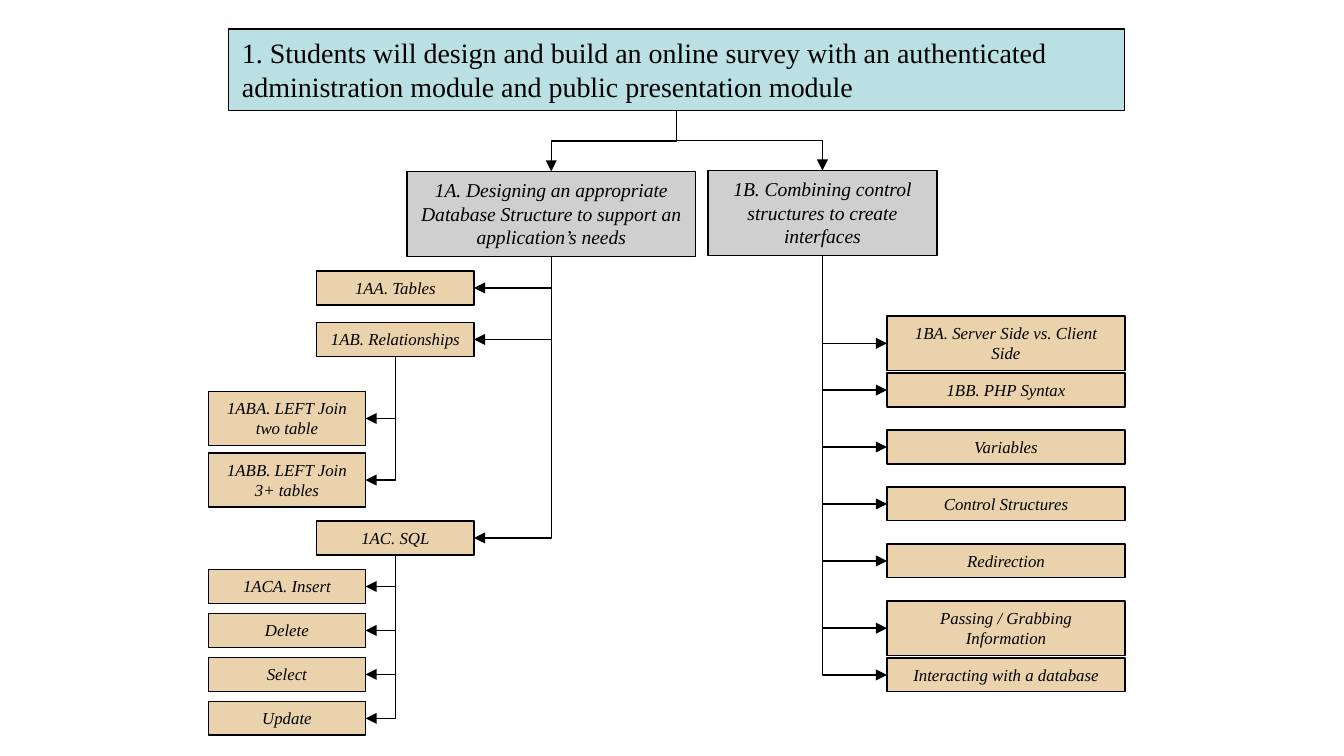
from pptx import Presentation, util as u
from pptx.dml.color import RGBColor
from pptx.enum import shapes, text
from pptx.oxml.ns import qn
from lxml import etree

COLOURS = {"goal": "BBE0E3", "module": "CFCFCF", "topic": "EAD3AC", "ink": "000000"}
SIZES = {"goal": 15, "module": 10.5, "topic": 9}
WIDTH = u.Inches(10)
HEIGHT = WIDTH * 9 // 16
CELL = WIDTH / 100  # the slide is a grid of 100 columns of square cells
ONE_LINE, TWO_LINES = 2.52, 4.04  # topic heights in rows


def cells(n):
    return round(n * CELL)


def rgb(name):
    return RGBColor.from_string(COLOURS[name])


def style_box(sp, label, kind, box):
    for name, value in zip(("left", "top", "width", "height"), box):
        setattr(sp, name, cells(value))
    sp.fill.solid()
    sp.fill.fore_color.rgb = rgb(kind)
    sp.line.color.rgb = rgb("ink")
    sp.line.width = u.Pt(0.75)
    tf = sp.text_frame
    frame_format = {
        "word_wrap": True, "auto_size": text.MSO_AUTO_SIZE.NONE,
        "vertical_anchor": text.MSO_ANCHOR.TOP,
        "margin_left": u.Inches(0.1), "margin_right": u.Inches(0.1),
        "margin_top": u.Inches(0.05), "margin_bottom": u.Inches(0.05),
    }
    for name, value in frame_format.items():
        setattr(tf, name, value)
    p = tf.paragraphs[0]
    p.alignment = text.PP_ALIGN.LEFT if kind == "goal" else text.PP_ALIGN.CENTER
    r = p.add_run()
    r.text = label
    font_format = {"name": "Times New Roman", "size": u.Pt(SIZES[kind]),
                   "bold": False, "italic": kind != "goal"}
    for name, value in font_format.items():
        setattr(r.font, name, value)
    r.font.color.rgb = rgb("ink")


def add_box(s, label, kind, box):
    sp = s.shapes.add_shape(shapes.MSO_SHAPE.RECTANGLE, 0, 0, 0, 0)
    sp.shadow.inherit = False
    style_box(sp, label, kind, box)
    return box


def add_elbow(s, start, end, preset):
    """Arrow that leaves start downwards; the preset is turned a quarter."""
    (x1, y1), (x2, y2) = start, end
    run, drop = abs(x2 - x1), y2 - y1
    left, top = (x1 + x2 - drop) / 2, (y1 + y2 - run) / 2
    cx = s.shapes.add_connector(shapes.MSO_CONNECTOR.ELBOW, cells(left), cells(top),
                                cells(left + drop), cells(top + run))
    cx.line.color.rgb = rgb("ink")
    cx.line.width = u.Pt(0.75)
    sp_pr = cx._element.spPr
    sp_pr.find(qn("a:prstGeom")).set("prst", preset)
    xfrm = sp_pr.find(qn("a:xfrm"))
    if x2 < x1:
        xfrm.set("rot", str(90 * 60000))
    else:
        xfrm.set("rot", str(270 * 60000))
        xfrm.set("flipH", "1")
    etree.SubElement(sp_pr.find(qn("a:ln")), qn("a:tailEnd"), type="triangle")
    etree.SubElement(sp_pr, qn("a:effectLst"))


def bottom_centre(box):
    left, top, width, height = box
    return left + width / 2, top + height


def add_goal(s, label, box):
    style_box(s.shapes.title, label, "goal", box)
    return box


def add_module(s, goal, label, box):
    left, top, width, _ = add_box(s, label, "module", box)
    add_elbow(s, bottom_centre(goal), (left + width / 2, top), "bentConnector3")
    return box


def add_branch(s, parent, left, width, topics):
    """Topics (label, top, height) beside the trunk below parent; returns their boxes."""
    trunk = bottom_centre(parent)
    boxes = []
    for label, top, height in topics:
        boxes.append(add_box(s, label, "topic", (left, top, width, height)))
        edge = left if left > trunk[0] else left + width
        add_elbow(s, trunk, (edge, top + height / 2), "bentConnector2")
    return boxes


def stack(labels, top, pitch, two_line=()):
    return [(label, top + i * pitch, TWO_LINES if label in two_line else ONE_LINE)
            for i, label in enumerate(labels)]


def main():
    prs = Presentation()
    prs.slide_width, prs.slide_height = WIDTH, HEIGHT
    s = prs.slides.add_slide(prs.slide_layouts[5])

    goal = add_goal(s, "1. Students will design and build an online survey with an "
                    "authenticated administration module and public presentation module",
                    (17, 2.15, 66.67, 6.07))
    database = add_module(s, goal, "1A. Designing an appropriate Database Structure "
                          "to support an application’s needs", (30.27, 12.75, 21.5, 6.35))
    control = add_module(s, goal, "1B. Combining control structures to create interfaces",
                         (52.67, 12.68, 17.05, 6.33))

    _, relationships, sql = add_branch(s, database, 23.57, 11.7, [
        ("1AA. Tables", 20.17, ONE_LINE),
        ("1AB. Relationships", 24, ONE_LINE),
        ("1AC. SQL", 38.77, ONE_LINE),
    ])
    joins = ["1ABA. LEFT Join two table", "1ABB. LEFT Join 3+ tables"]
    add_branch(s, relationships, 15.5, 11.7, stack(joins, 29.12, 4.58, joins))
    add_branch(s, sql, 15.5, 11.7,
               stack(["1ACA. Insert", "Delete", "Select", "Update"], 42.38, 3.27))

    server, passing = "1BA. Server Side vs. Client Side", "Passing / Grabbing Information"
    add_branch(s, control, 66, 17.7, stack(
        [server, "1BB. PHP Syntax", "Variables", "Control Structures", "Redirection",
         passing, "Interacting with a database"], 23.52, 4.24, (server, passing)))
    prs.save("out.pptx")


if __name__ == "__main__":
    main()
